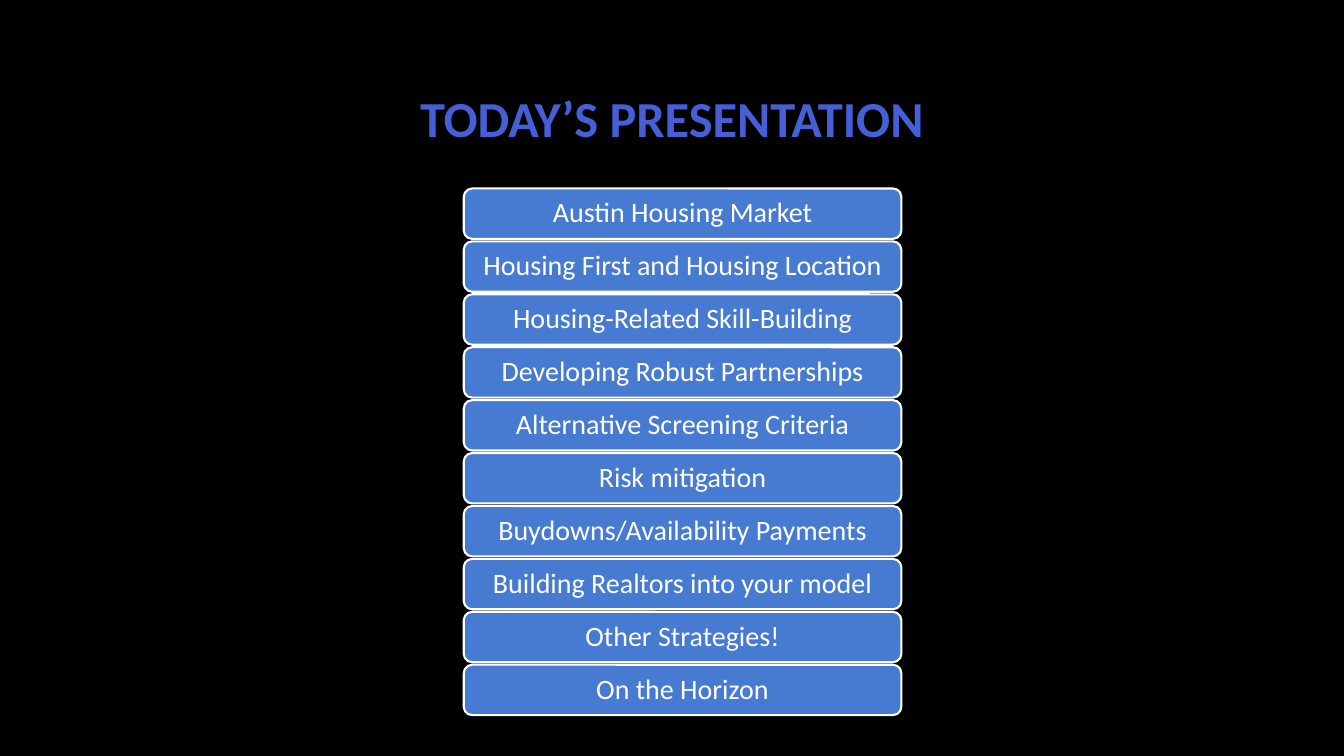
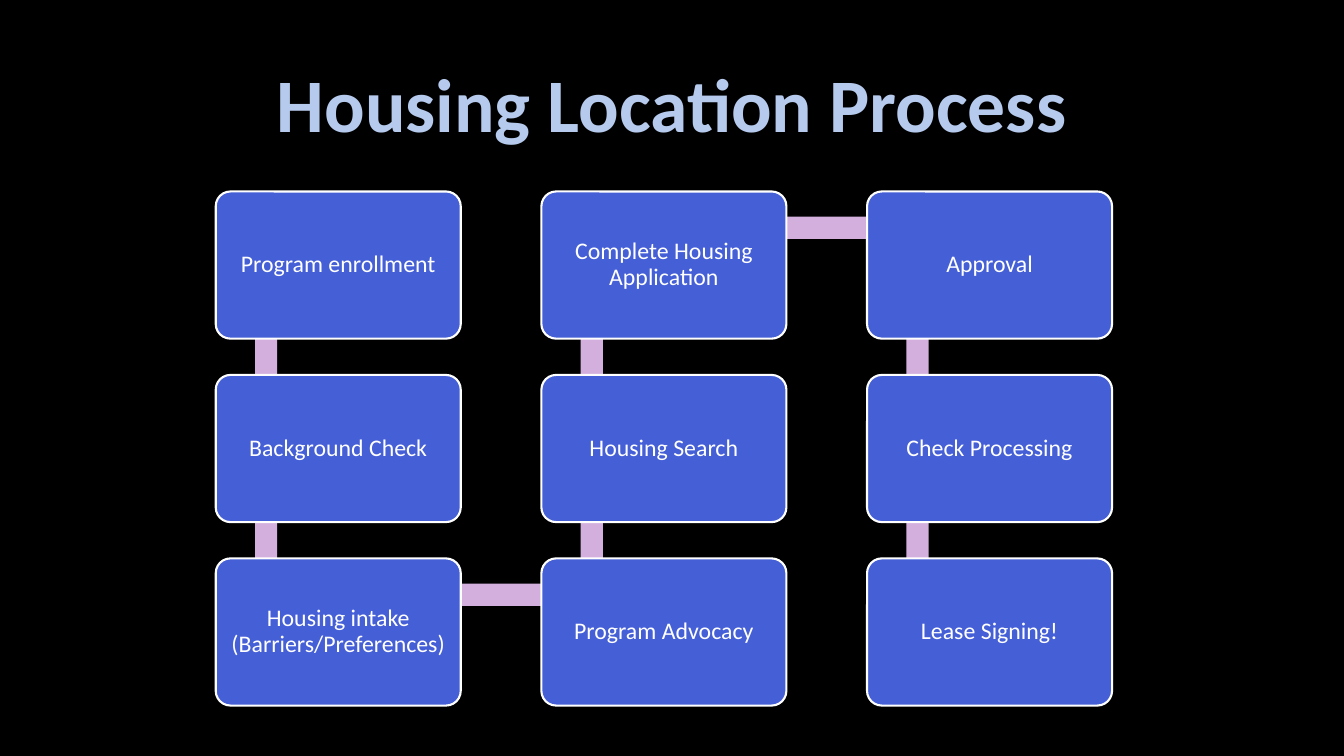
import pptx
import pptx.dml.color
import pptx.enum.shapes
import pptx.enum.text
import pptx.util

Inches = pptx.util.Inches
Pt = pptx.util.Pt
Shape = pptx.enum.shapes.MSO_SHAPE
WIDE, HIGH = 13.33, 7.5
FONT = "Calibri"
HUES = {
    "night": "000000",
    "white": "FFFFFF",
    "royal": "455FD6",
    "blue": "477BD1",
    "pale": "B5CAED",
    "lilac": "D2AFDD",
}


def write(shape, text, size, hue, inset, bold=False):
    frame = shape.text_frame
    frame.word_wrap = True
    frame.auto_size = pptx.enum.text.MSO_AUTO_SIZE.NONE
    frame.vertical_anchor = pptx.enum.text.MSO_ANCHOR.MIDDLE
    frame.margin_left = frame.margin_right = Inches(inset[0])
    frame.margin_top = frame.margin_bottom = Inches(inset[1])
    para = frame.paragraphs[0]
    para.alignment = pptx.enum.text.PP_ALIGN.CENTER
    para.line_spacing = 0.9
    run = para.add_run()
    run.text = text
    run.font.name = FONT
    run.font.size = Pt(size)
    run.font.bold = bold
    run.font.color.rgb = pptx.dml.color.RGBColor.from_string(HUES[hue])


def block(slide, kind, place, hue, edge=None):
    shape = slide.shapes.add_shape(kind, *[Inches(n) for n in place])
    shape.shadow.inherit = False
    shape.fill.solid()
    shape.fill.fore_color.rgb = pptx.dml.color.RGBColor.from_string(HUES[hue])
    if edge:
        shape.line.color.rgb = pptx.dml.color.RGBColor.from_string(HUES[edge])
        shape.line.width = Pt(1.5)
    else:
        shape.line.fill.background()
    return shape


deck = pptx.Presentation()
deck.slide_width = Inches(WIDE)
deck.slide_height = Inches(HIGH)
back = deck.slide_master.background.fill
back.solid()
back.fore_color.rgb = pptx.dml.color.RGBColor.from_string(HUES["night"])

heads = [
    ("TODAY’S PRESENTATION", 36, "royal", 0.41, 9.87, 1.59),
    ("Housing Location Process", 54, "pale", 0.57, 8.13, 1.01),
]
slides = []
for text, size, hue, top, width, height in heads:
    slide = deck.slides.add_slide(deck.slide_layouts[5])
    title = slide.shapes.title
    title.left, title.top = Inches((WIDE - width) / 2), Inches(top)
    title.width, title.height = Inches(width), Inches(height)
    write(title, text, size, hue, (0.1, 0.05), True)
    slides.append(slide)
agenda, process = slides

topics = [
    "Austin Housing Market",
    "Housing First and Housing Location",
    "Housing-Related Skill-Building",
    "Developing Robust Partnerships",
    "Alternative Screening Criteria",
    "Risk mitigation",
    "Buydowns/Availability Payments",
    "Building Realtors into your model",
    "Other Strategies!",
    "On the Horizon",
]
pitch = 0.07 * HIGH
for row, topic in enumerate(topics):
    place = (4.6, 1.87 + row * pitch, 4.34, 0.5)
    bar = block(agenda, Shape.ROUNDED_RECTANGLE, place, "blue", "white")
    write(bar, topic, 20, "white", (0.08, 0.04))

steps = [
    ("Program enrollment", 0, 0),
    ("Background Check", 0, 1),
    ("Housing intake (Barriers/Preferences)", 0, 2),
    ("Program Advocacy", 1, 2),
    ("Housing Search", 1, 1),
    ("Complete Housing Application", 1, 0),
    ("Approval", 2, 0),
    ("Check Processing", 2, 1),
    ("Lease Signing!", 2, 2),
]
left, top = 2.14, 1.9
across, down = 3.23, 1.82
width, height, thick = 2.43, 1.46, 0.22

for (_, col, row), (_, new, low) in zip(steps, steps[1:]):
    x = left + col * across
    y = top + min(row, low) * down
    if col == new:
        place = (x + 0.39, y + 0.36, thick, down)
    else:
        place = (x + 0.5, y + 0.25, across, thick)
    block(process, Shape.RECTANGLE, place, "lilac")

for text, col, row in steps:
    place = (left + col * across, top + row * down, width, height)
    card = block(process, Shape.ROUNDED_RECTANGLE, place, "royal", "white")
    card.adjustments[0] = 0.1
    write(card, text, 17, "white", (0.07, 0.07))

deck.save("out.pptx")
